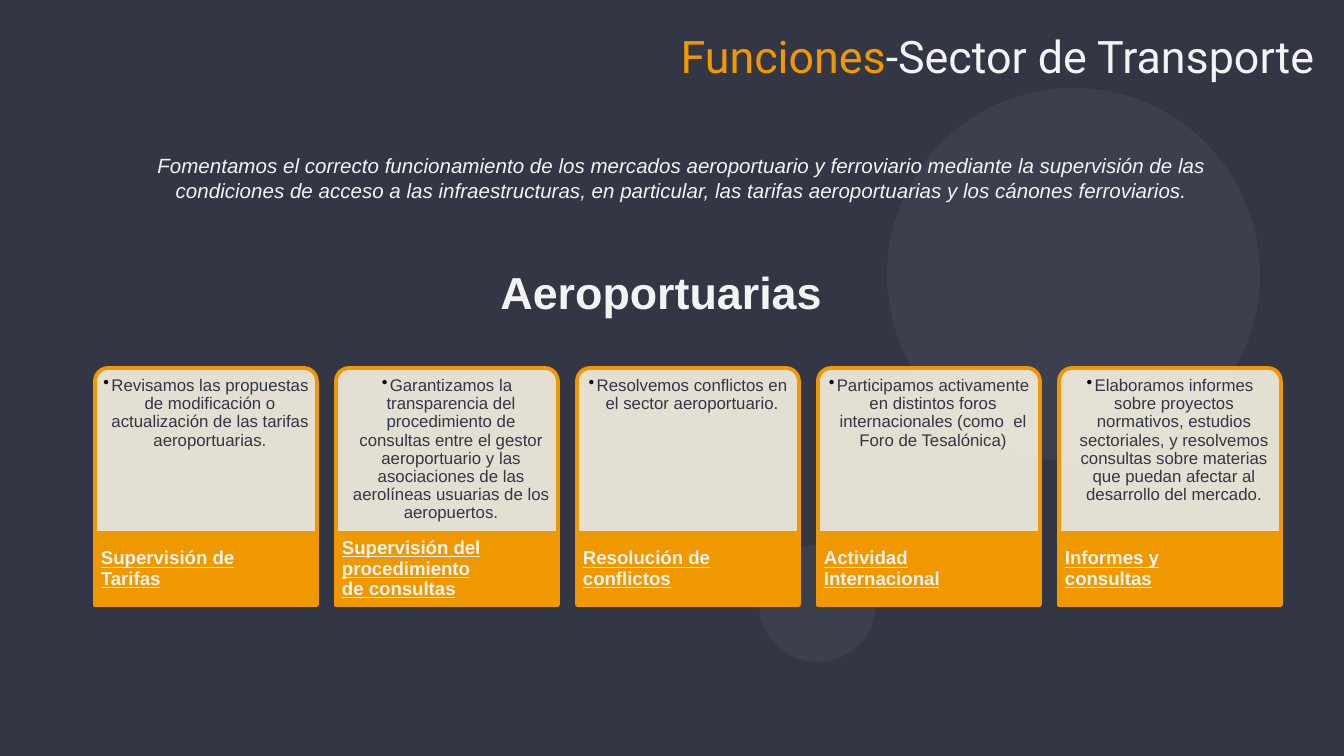
"""Build the slide on airport functions of the transport sector."""
import pptx
import pptx.dml.color
import pptx.enum.shapes
import pptx.enum.text
import pptx.oxml.ns
import pptx.util
from lxml import etree

PX = 914400 / 134.4
NAVY, ORANGE, WHITE, CREAM, CIRCLE = "333644", "F09800", "F3F3F3", "F7F2E2", "3C3F4E"
SHAPE = pptx.enum.shapes.MSO_SHAPE
ALIGN = pptx.enum.text.PP_ALIGN
ANCHOR = pptx.enum.text.MSO_ANCHOR
qn = pptx.oxml.ns.qn
color = pptx.dml.color.RGBColor.from_string

deck = pptx.Presentation()
deck.slide_width, deck.slide_height = round(1344 * PX), round(756 * PX)
page = deck.slides.add_slide(deck.slide_layouts[5])
page.background.fill.solid()
page.background.fill.fore_color.rgb = color(NAVY)


def add_shape(kind, place, fill, line=None):
    shape = page.shapes.add_shape(kind, *[round(length * PX) for length in place])
    shape.shadow.inherit = False
    shape.fill.solid()
    shape.fill.fore_color.rgb = color(fill)
    if line:
        shape.line.color.rgb = color(line)
        shape.line.width = pptx.util.Pt(2)
    else:
        shape.line.fill.background()
    return shape


def add_text(place, text, size, ink, insets=(13, 7, 13, 7), align=ALIGN.CENTER):
    box = page.shapes.add_textbox(*[round(length * PX) for length in place])
    frame = box.text_frame
    frame.word_wrap = True
    frame.margin_left, frame.margin_top, frame.margin_right, frame.margin_bottom = [
        round(inset * PX) for inset in insets]
    frame.text = text
    para = frame.paragraphs[0]
    para.alignment = align
    font = para.runs[0].font
    font.name, font.size = "Arial", pptx.util.Pt(size)
    font.color.rgb = color(ink)
    return frame


for place in [(887, 88, 373, 373), (759, 545, 117, 117)]:
    add_shape(SHAPE.OVAL, place, CIRCLE)

title = page.shapes.title
title.left, title.top, title.width, title.height = [
    round(length * PX) for length in (500, 16, 995, 97)]
frame = title.text_frame
frame.word_wrap = True
frame.auto_size = pptx.enum.text.MSO_AUTO_SIZE.NONE
frame.vertical_anchor = ANCHOR.TOP
frame.margin_left = frame.margin_top = frame.margin_right = frame.margin_bottom = round(13 * PX)
para = frame.paragraphs[0]
para.alignment = ALIGN.CENTER
for text, ink in [("Funciones", ORANGE), ("-Sector de Transporte", WHITE)]:
    span = para.add_run()
    span.text = text
    span.font.name, span.font.size = "Roboto", pptx.util.Pt(24)
    span.font.color.rgb = color(ink)

intro = add_text(
    (106, 146, 1152, 138),
    "Fomentamos el correcto funcionamiento de los mercados aeroportuario y ferroviario "
    "mediante la supervisión de las condiciones de acceso a las infraestructuras, en "
    "particular, las tarifas aeroportuarias y los cánones ferroviarios.", 11, WHITE)
intro.paragraphs[0].runs[0].font.italic = True

heading = add_text((409, 258, 504, 67), "Aeroportuarias", 24, WHITE)
heading.paragraphs[0].runs[0].font.bold = True

cards = [
    ("Supervisión de Tarifas",
     "Revisamos las propuestas de modificación o actualización de las tarifas aeroportuarias."),
    ("Supervisión del procedimiento de consultas",
     "Garantizamos la transparencia del procedimiento de consultas entre el gestor "
     "aeroportuario y las asociaciones de las aerolíneas usuarias de los aeropuertos."),
    ("Resolución de conflictos", "Resolvemos conflictos en el sector aeroportuario."),
    ("Actividad Internacional",
     "Participamos activamente en distintos foros internacionales (como  el Foro de Tesalónica)"),
    ("Informes y consultas",
     "Elaboramos informes sobre proyectos normativos, estudios sectoriales, y resolvemos "
     "consultas sobre materias que puedan afectar al desarrollo del mercado."),
]
for index, (label, detail) in enumerate(cards):
    left = 95 + 241 * index
    panel = add_shape(SHAPE.ROUND_2_SAME_RECTANGLE, (left, 368, 222, 165), CREAM, ORANGE)
    panel.adjustments[0], panel.adjustments[1] = 0.08, 0
    tint = panel.fill._xPr.find(qn("a:solidFill"))[0]
    etree.SubElement(tint, qn("a:alpha"), val="90000")

    body = add_text((left + 4, 372, 214, 161), detail, 9, NAVY, (1, 5, 1, 1))
    para = body.paragraphs[0]
    para.line_spacing = 0.9
    props = para._p.get_or_add_pPr()
    props.set("marL", str(round(8 * PX)))
    props.set("indent", str(round(-8 * PX)))
    bullet_color = etree.SubElement(props, qn("a:buClr"))
    etree.SubElement(bullet_color, qn("a:srgbClr"), val="000000")
    etree.SubElement(props, qn("a:buChar"), char="•")

    add_shape(SHAPE.RECTANGLE, (left, 533, 222, 72), ORANGE, ORANGE)
    caption = add_text((left, 533, 156, 72), label, 10, WHITE, (6, 0, 1, 0), ALIGN.LEFT)
    caption.vertical_anchor = ANCHOR.MIDDLE
    caption.paragraphs[0].line_spacing = 0.9
    font = caption.paragraphs[0].runs[0].font
    font.bold = font.underline = True

deck.save("out.pptx")
